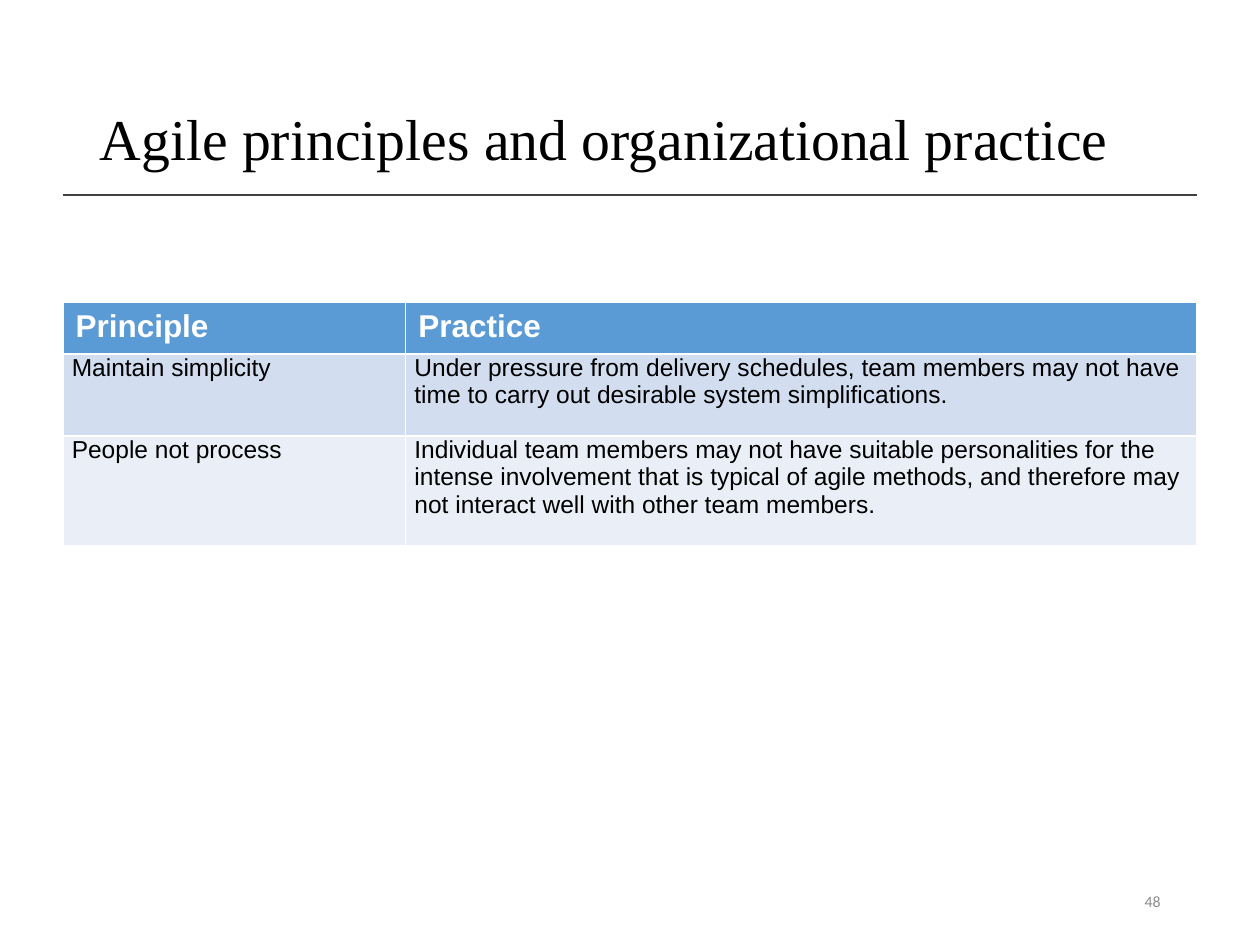
from pptx import Presentation
from pptx.dml.color import RGBColor
from pptx.enum.shapes import MSO_CONNECTOR
from pptx.enum.text import MSO_ANCHOR, PP_ALIGN
from pptx.oxml.ns import qn
from pptx.util import Inches, Pt
from lxml import etree

BLACK = RGBColor(0x00, 0x00, 0x00)
WHITE = RGBColor(0xFF, 0xFF, 0xFF)
RULE = RGBColor(0x40, 0x40, 0x40)
GREY = RGBColor(0x8C, 0x8C, 0x8C)
HEADER = RGBColor(0x5B, 0x9B, 0xD5)
BANDS = [RGBColor(0xD2, 0xDE, 0xEF), RGBColor(0xEA, 0xEF, 0xF7)]
LEFT, WIDTH = 0.5, 9

ROWS = [
    ("Principle", "Practice"),
    ("Maintain simplicity",
     "Under pressure from delivery schedules, team members may not have time "
     "to carry out desirable system simplifications."),
    ("People not process",
     "Individual team members may not have suitable personalities for the "
     "intense involvement that is typical of agile methods, and therefore may "
     "not interact well with other team members."),
]
COL_WIDTHS = [2.72, 6.28]
ROW_HEIGHTS = [0.41, 0.65, 0.87]


def format_text(tf, font, size, color, bold=False):
    for p in tf.paragraphs:
        for r in p.runs:
            r.font.name = font
            r.font.size = Pt(size)
            r.font.color.rgb = color
            r.font.bold = bold


prs = Presentation()
prs.slide_width, prs.slide_height = Inches(10), Inches(7.5)
s = prs.slides.add_slide(prs.slide_layouts[5])

# Rule under the title
line = s.shapes.add_connector(MSO_CONNECTOR.STRAIGHT, Inches(LEFT), Inches(1.55),
                              Inches(LEFT + WIDTH), Inches(1.55))
line.line.color.rgb = RULE
line.line.width = Pt(1)
etree.SubElement(line._element.spPr, qn("a:effectLst"))

# Title
title = s.shapes.title
title.left, title.top = Inches(0.69), Inches(0.4)
title.width, title.height = Inches(8.62), Inches(1.45)
tf = title.text_frame
tf.text = "Agile principles and organizational practice"
tf.vertical_anchor = MSO_ANCHOR.MIDDLE
tf.paragraphs[0].alignment = PP_ALIGN.LEFT
tf.paragraphs[0].line_spacing = 0.9
format_text(tf, "Times New Roman", 33, BLACK)

# Table; its default style draws the white cell borders
table = s.shapes.add_table(len(ROWS), len(COL_WIDTHS), Inches(LEFT), Inches(2.4),
                           Inches(WIDTH), Inches(sum(ROW_HEIGHTS))).table
for col, width in zip(table.columns, COL_WIDTHS):
    col.width = Inches(width)
for i, (texts, height) in enumerate(zip(ROWS, ROW_HEIGHTS)):
    table.rows[i].height = Inches(height)
    for j, text in enumerate(texts):
        cell = table.cell(i, j)
        cell.text_frame.text = text
        cell.fill.solid()
        if i == 0:
            cell.fill.fore_color.rgb = HEADER
            format_text(cell.text_frame, "Arial", 18, WHITE, bold=True)
        else:
            cell.fill.fore_color.rgb = BANDS[(i - 1) % 2]
            cell.margin_left = cell.margin_right = Inches(0.07)
            cell.margin_top = cell.margin_bottom = 0
            format_text(cell.text_frame, "Arial", 14, BLACK)

# Slide number
sp = s.shapes.add_textbox(Inches(7.06), Inches(6.95), Inches(2.25), Inches(0.4))
tf = sp.text_frame
tf.word_wrap = True
tf.vertical_anchor = MSO_ANCHOR.MIDDLE
tf.text = "48"
tf.paragraphs[0].alignment = PP_ALIGN.RIGHT
format_text(tf, "Calibri", 9, GREY)

prs.save("out.pptx")
